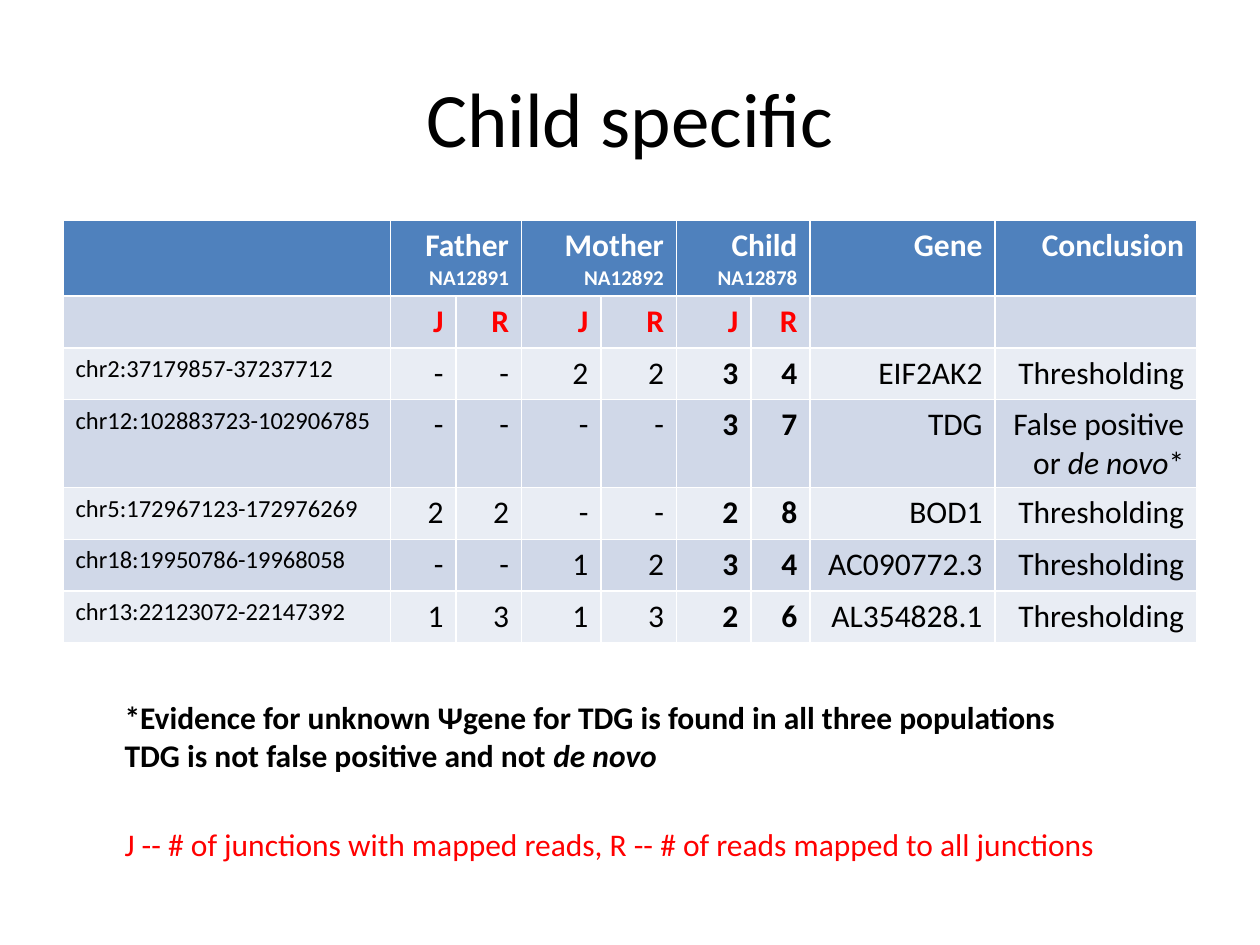
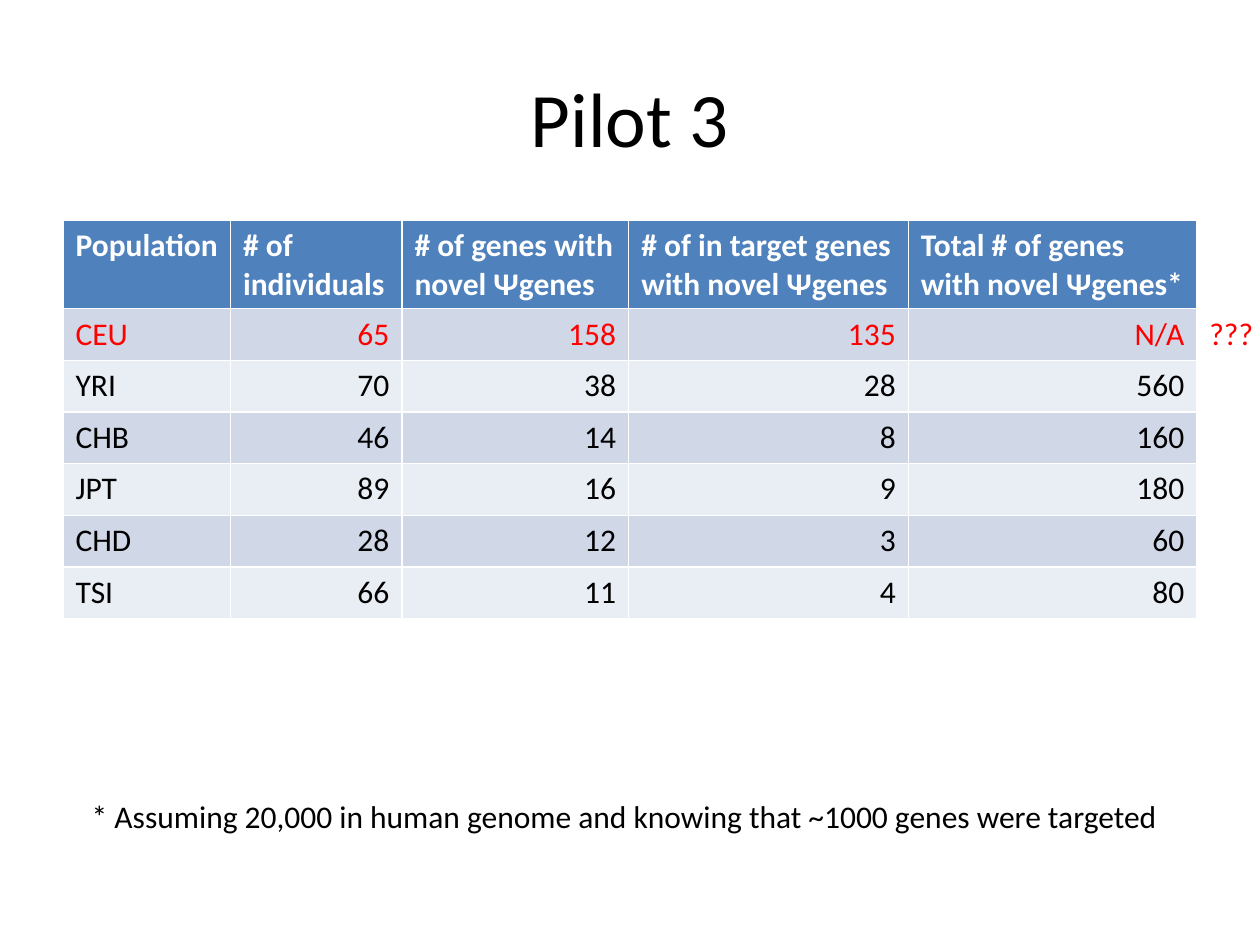
from dataclasses import dataclass

from pptx import Presentation
from pptx.dml.color import RGBColor
from pptx.enum.text import MSO_ANCHOR, PP_ALIGN
from pptx.util import Inches, Pt

COL, ROW = Inches(0.1), Inches(0.05)
COLS, ROWS = 100, 150
MARGIN, TABLE_TOP, LINE = 5, 35, 8.2
FONT = "Calibri"
BODY, SMALL, HEADING = 18, 12, 44

BLACK = RGBColor(0x00, 0x00, 0x00)
WHITE = RGBColor(0xFF, 0xFF, 0xFF)
RED = RGBColor(0xFF, 0x00, 0x00)
BLUE = RGBColor(0x4F, 0x81, 0xBD)
BANDS = RGBColor(0xD0, 0xD8, 0xE8), RGBColor(0xE9, 0xED, 0xF4)
LEFT, CENTER, RIGHT = PP_ALIGN.LEFT, PP_ALIGN.CENTER, PP_ALIGN.RIGHT


@dataclass(frozen=True)
class Run:
    text: str
    size: float | None = None
    italic: bool | None = None


@dataclass(frozen=True)
class Style:
    size: float = BODY
    color: RGBColor = BLACK
    bold: bool = False
    align: PP_ALIGN = LEFT


@dataclass(frozen=True)
class Cell:
    lines: tuple
    style: Style
    span: int = 1


@dataclass(frozen=True)
class Box:
    left: float
    top: float
    width: float
    height: float
    lines: tuple
    style: Style = Style()
    wrap: bool = False
    anchor: MSO_ANCHOR = MSO_ANCHOR.TOP


TITLE = Style(HEADING, align=CENTER)
HEAD = Style(color=WHITE, bold=True)
HEAD_RIGHT = Style(color=WHITE, bold=True, align=RIGHT)
COUNT_LABEL = Style(color=RED, bold=True, align=RIGHT)
REGION = Style(14)
NUMBER = Style(align=RIGHT)
CHILD_NUMBER = Style(bold=True, align=RIGHT)
FLAGGED = Style(color=RED)
FLAGGED_NUMBER = Style(color=RED, align=RIGHT)


def write(tf, lines: tuple, style: Style) -> None:
    for i, line in enumerate(lines):
        p = tf.add_paragraph() if i else tf.paragraphs[0]
        p.alignment = style.align
        p.font.name, p.font.size = FONT, Pt(style.size)
        p.font.bold, p.font.color.rgb = style.bold, style.color
        for part in (line,) if isinstance(line, (str, Run)) else line:
            run = Run(part) if isinstance(part, str) else part
            r = p.add_run()
            r.text = run.text
            r.font.italic = run.italic
            if run.size:
                r.font.size = Pt(run.size)


def add_box(s, box: Box) -> None:
    sp = s.shapes.add_textbox(int(box.left * COL), int(box.top * ROW),
                              int(box.width * COL), int(box.height * ROW))
    tf = sp.text_frame
    tf.word_wrap, tf.vertical_anchor = box.wrap, box.anchor
    write(tf, box.lines, box.style)


def add_grid(s, widths: tuple, head_height: float, rows: list) -> None:
    heights = [head_height] + [LINE] * (len(rows) - 1)
    table = s.shapes.add_table(len(rows), len(widths), MARGIN * COL, TABLE_TOP * ROW,
                               int(sum(widths) * COL), int(sum(heights) * ROW)).table
    for column, width in zip(table.columns, widths):
        column.width = int(width * COL)
    for y, (row, height) in enumerate(zip(rows, heights)):
        table.rows[y].height = int(height * ROW)
        for x in range(len(widths)):
            fill = table.cell(y, x).fill
            fill.solid()
            fill.fore_color.rgb = BANDS[(y - 1) % 2] if y else BLUE
        x = 0
        for cell in row:
            target = table.cell(y, x)
            if cell.span > 1:
                target.merge(table.cell(y, x + cell.span - 1))
            write(target.text_frame, cell.lines, cell.style)
            x += cell.span


def cells(texts: tuple, styles: list) -> list:
    return [Cell((text,), style) for text, style in zip(texts, styles)]


def add_slide(prs, title: str):
    s = prs.slides.add_slide(prs.slide_layouts[6])
    add_box(s, Box(MARGIN, 6, COLS - 2 * MARGIN, 25, (title,), TITLE, True, MSO_ANCHOR.MIDDLE))
    return s


def child_specific(prs) -> None:
    s = add_slide(prs, "Child specific")
    blank = Cell((), HEAD)
    head = [
        blank,
        Cell(("Father", Run("NA12891", SMALL)), HEAD_RIGHT, 2),
        Cell((("Mother ", Run("NA12892", SMALL)),), HEAD_RIGHT, 2),
        Cell((("Child ", Run("NA12878", SMALL)),), HEAD_RIGHT, 2),
        *cells(("Gene", "Conclusion"), [HEAD_RIGHT] * 2),
    ]
    labels = [blank, *cells(("J", "R") * 3, [COUNT_LABEL] * 6), blank, blank]
    styles = [REGION] + [NUMBER] * 4 + [CHILD_NUMBER] * 2 + [NUMBER] * 2
    de_novo = Run("de novo", italic=True)
    regions = [
        ("chr2:37179857-37237712", *"--2234", "EIF2AK2", "Thresholding"),
        ("chr12:102883723-102906785", *"----37", "TDG", ("False positive or ", de_novo, "*")),
        ("chr5:172967123-172976269", *"22--28", "BOD1", "Thresholding"),
        ("chr18:19950786-19968058", *"--1234", "AC090772.3", "Thresholding"),
        ("chr13:22123072-22147392", *"131326", "AL354828.1", "Thresholding"),
    ]
    add_grid(s, (26, 5.2, 5.2, 6.3, 6, 5.9, 4.7, 14.7, 16), 12,
             [head, labels] + [cells(region, styles) for region in regions])
    add_box(s, Box(8.9, 130, 80.1, 8,
                   ("J -- # of junctions with mapped reads, R -- # of reads mapped to all junctions",),
                   FLAGGED))
    add_box(s, Box(8.9, 109.8, 76.7, 14.2,
                   ("*Evidence for unknown Ψgene for TDG is found in all three populations",
                    ("TDG is not false positive and not ", de_novo)),
                   Style(bold=True)))


def pilot_3(prs) -> None:
    s = add_slide(prs, "Pilot 3")
    head = ("Population", "# of individuals", "# of genes with novel Ψgenes",
            "# of in target genes with novel Ψgenes", "Total # of genes with novel Ψgenes*")
    flagged = ("CEU", "65", "158", "135", "N/A")
    populations = [
        ("YRI", "70", "38", "28", "560"),
        ("CHB", "46", "14", "8", "160"),
        ("JPT", "89", "16", "9", "180"),
        ("CHD", "28", "12", "3", "60"),
        ("TSI", "66", "11", "4", "80"),
    ]
    add_grid(s, (13.3, 13.6, 18, 22.2, 22.9), 14,
             [cells(head, [HEAD] * 5), cells(flagged, [FLAGGED] + [FLAGGED_NUMBER] * 4)]
             + [cells(population, [Style()] + [NUMBER] * 4) for population in populations])
    add_box(s, Box(95, 48.8, 5.5, 8, ("???",), FLAGGED))
    add_box(s, Box(6.3, 125.6, 87.4, 8,
                   ("* Assuming 20,000 in human genome and knowing that ~1000 genes were targeted",)))


def main() -> None:
    prs = Presentation()
    prs.slide_width, prs.slide_height = COLS * COL, ROWS * ROW
    child_specific(prs)
    pilot_3(prs)
    prs.save("out.pptx")


if __name__ == "__main__":
    main()
